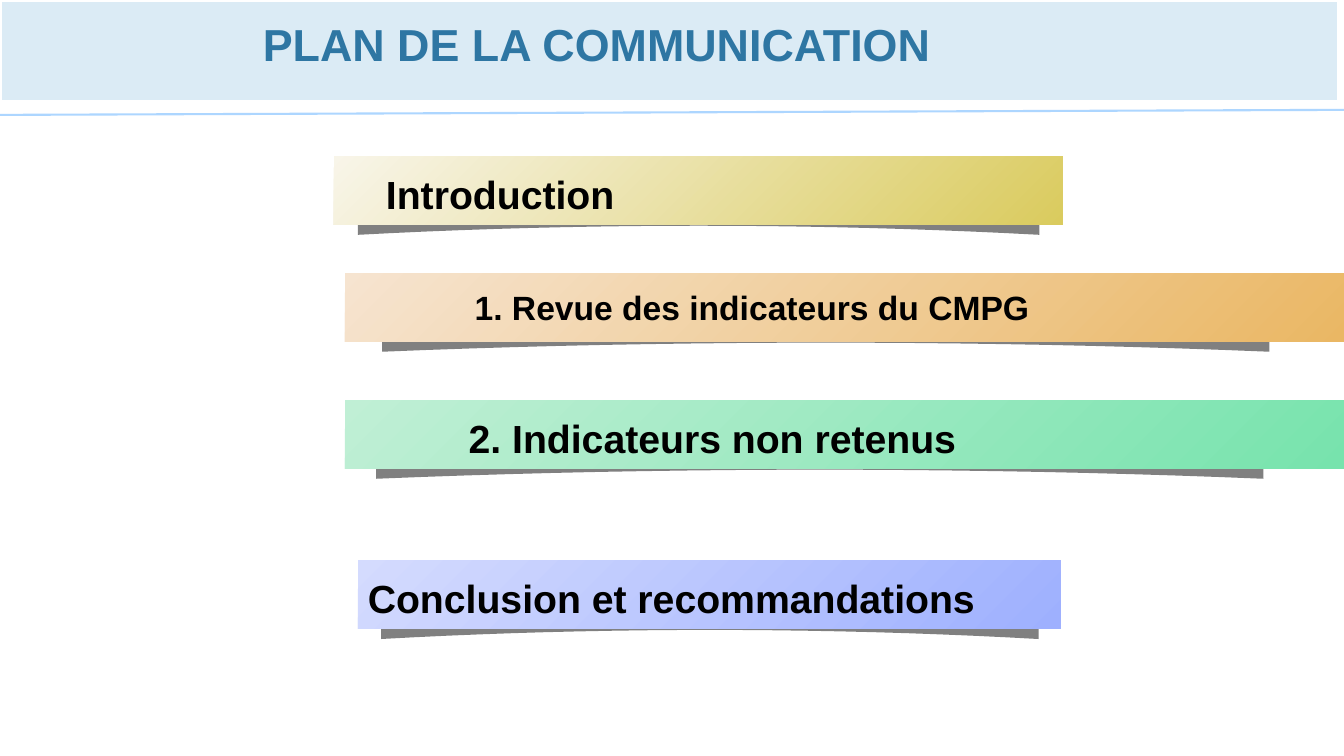
from lxml import etree
from pptx import Presentation
from pptx.dml.color import RGBColor
from pptx.enum import shapes, text
from pptx.oxml import ns
from pptx.util import Inches, Pt

WHITE = RGBColor(0xFF, 0xFF, 0xFF)
BLACK = RGBColor(0x00, 0x00, 0x00)
HEADER_FILL = RGBColor(0xDB, 0xEB, 0xF5)
HEADER_RULE = RGBColor(0xAD, 0xD6, 0xFF)
TITLE_BLUE = RGBColor(0x2E, 0x76, 0xA3)
SHADOW_GRAY = RGBColor(0x80, 0x80, 0x80)
GREEN = RGBColor(0xC0, 0xEF, 0xD5), RGBColor(0x77, 0xE3, 0xAD)
ORANGE = RGBColor(0xF6, 0xE4, 0xD0), RGBColor(0xEA, 0xB7, 0x64)
YELLOW = RGBColor(0xF8, 0xF5, 0xE9), RGBColor(0xDA, 0xCB, 0x5E)
BLUE = RGBColor(0xD4, 0xDB, 0xFE), RGBColor(0x9E, 0xB0, 0xFE)

BAR_HEIGHT = 0.68
SHADOW_OFFSET = 0.45
SHADOW_HEIGHT = 0.33
SHADOW_SIDE = 0.08
SHADOW_ARCH = 0.09
ARCH_STEPS = 20

BANNERS = [
    ("2. Indicateurs non retenus", 28, GREEN, 3.97, (3.42, 9.92), (3.73, 8.8), (4.55, 9.12)),
    ("1. Revue des indicateurs du CMPG", 24, ORANGE, 2.71, (3.42, 9.91), (3.79, 8.8), (4.61, 12.73)),
    ("Introduction", 28, YELLOW, 1.55, (3.31, 7.23), (3.55, 6.76), (3.73, 3.19)),
    ("Conclusion et recommandations", 28, BLUE, 5.56, (3.55, 6.97), (3.78, 6.52), (3.55, 8.53)),
]


def add_bar(container, left, top, width, height):
    bar = container.add_shape(
        shapes.MSO_SHAPE.RECTANGLE, Inches(left), Inches(top), Inches(width), Inches(height)
    )
    bar.shadow.inherit = False
    return bar


def add_label(container, wording, left, top, width, height, size, color):
    label = container.add_textbox(Inches(left), Inches(top), Inches(width), Inches(height))
    frame = label.text_frame
    frame.word_wrap = True
    paragraph = frame.paragraphs[0]
    paragraph.text = wording
    paragraph.font.name = "Arial"
    paragraph.font.size = Pt(size)
    paragraph.font.bold = True
    paragraph.font.color.rgb = color
    return label


def add_curved_shadow(container, left, top, width):
    points = [(left, top + SHADOW_SIDE), (left + width / 2, top), (left + width, top + SHADOW_SIDE)]
    for step in range(ARCH_STEPS + 1):
        position = 1 - step / ARCH_STEPS
        rise = SHADOW_ARCH * (1 - (2 * position - 1) ** 2)
        points.append((left + width * position, top + SHADOW_HEIGHT - rise))
    corners = [(Inches(x), Inches(y)) for x, y in points]
    builder = container.build_freeform(*corners[0])
    builder.add_line_segments(corners[1:], close=True)
    shadow = builder.convert_to_shape()
    shadow.shadow.inherit = False
    shadow.fill.solid()
    shadow.fill.fore_color.rgb = SHADOW_GRAY
    shadow.line.fill.background()


def add_banner(slide, wording, size, colors, top, bar_span, shadow_span, label_span):
    group = slide.shapes.add_group_shape().shapes
    add_curved_shadow(group, shadow_span[0], top + SHADOW_OFFSET, shadow_span[1])
    bar = add_bar(group, bar_span[0], top, bar_span[1], BAR_HEIGHT)
    bar.line.fill.background()
    bar.fill.gradient()
    bar.fill.gradient_angle = 315
    for stop, color in zip(bar.fill.gradient_stops, colors):
        stop.color.rgb = color
    label_height = 0.57 if size == 28 else 0.5
    label = add_label(
        group, wording, label_span[0], top + 0.09, label_span[1], label_height, size, BLACK
    )
    label.text_frame.auto_size = text.MSO_AUTO_SIZE.SHAPE_TO_FIT_TEXT


def add_header(slide):
    band = add_bar(slide.shapes, 0, 0, 13.28, 1.01)
    band.fill.solid()
    band.fill.fore_color.rgb = HEADER_FILL
    band.line.color.rgb = WHITE
    band.line.width = Pt(2.25)
    rule = slide.shapes.add_connector(
        shapes.MSO_CONNECTOR.STRAIGHT, Inches(0), Inches(1.14), Inches(13.33), Inches(1.09)
    )
    rule.line.color.rgb = HEADER_RULE
    rule.line.width = Pt(1.5)
    etree.SubElement(rule._element.spPr, ns.qn("a:effectLst"))


def add_title(slide):
    title = add_label(
        slide.shapes, "PLAN DE LA COMMUNICATION", 2.14, 0.01, 7.56, 0.84, 32, TITLE_BLUE
    )
    title.text_frame.vertical_anchor = text.MSO_ANCHOR.MIDDLE
    title.text_frame.paragraphs[0].alignment = text.PP_ALIGN.CENTER


def main():
    presentation = Presentation()
    presentation.slide_width = Inches(13.33)
    presentation.slide_height = Inches(7.5)
    slide = presentation.slides.add_slide(presentation.slide_layouts[6])
    add_header(slide)
    for banner in BANNERS:
        add_banner(slide, *banner)
    add_title(slide)
    presentation.save("out.pptx")


if __name__ == "__main__":
    main()
